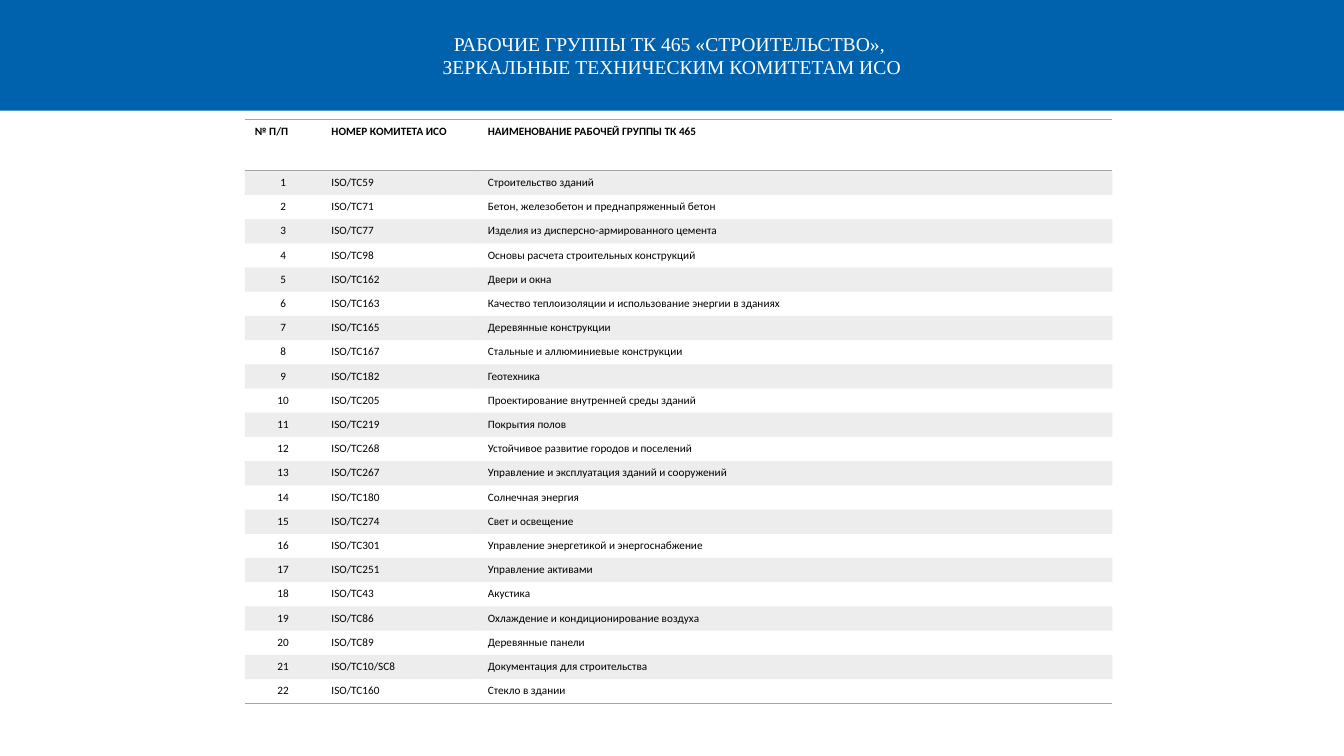
"""Build a slide listing the TC 465 working groups that mirror ISO committees."""
import pptx
import pptx.dml.color
import pptx.enum.shapes
import pptx.enum.text
import pptx.oxml
import pptx.oxml.ns
import pptx.util

Cm = pptx.util.Cm
Pt = pptx.util.Pt
RGB = pptx.dml.color.RGBColor
ALIGN = pptx.enum.text.PP_ALIGN
qn = pptx.oxml.ns.qn

BLUE = RGB(0x00, 0x62, 0xAC)
WHITE = RGB(0xFF, 0xFF, 0xFF)
BLACK = RGB(0x00, 0x00, 0x00)
GREY = RGB(0xA5, 0xA5, 0xA5)
PLAIN = "{2D5ABB26-0587-4C30-8999-92F81FD0307C}"

TITLE = [
    "РАБОЧИЕ ГРУППЫ ТК 465 «СТРОИТЕЛЬСТВО», ",
    "ЗЕРКАЛЬНЫЕ ТЕХНИЧЕСКИМ КОМИТЕТАМ ИСО",
]
HEAD = ["№ П/П", "НОМЕР КОМИТЕТА ИСО", "НАИМЕНОВАНИЕ РАБОЧЕЙ ГРУППЫ ТК 465"]
GROUPS = [
    ("59", "Строительство зданий"),
    ("71", "Бетон, железобетон и преднапряженный бетон"),
    ("77", "Изделия из дисперсно-армированного цемента"),
    ("98", "Основы расчета строительных конструкций"),
    ("162", "Двери и окна"),
    ("163", "Качество теплоизоляции и использование энергии в зданиях"),
    ("165", "Деревянные конструкции"),
    ("167", "Стальные и аллюминиевые конструкции"),
    ("182", "Геотехника"),
    ("205", "Проектирование внутренней среды зданий"),
    ("219", "Покрытия полов"),
    ("268", "Устойчивое развитие городов и поселений"),
    ("267", "Управление и эксплуатация зданий и сооружений"),
    ("180", "Солнечная энергия"),
    ("274", "Свет и освещение"),
    ("301", "Управление энергетикой и энергоснабжение"),
    ("251", "Управление активами"),
    ("43", "Акустика"),
    ("86", "Охлаждение и кондиционирование воздуха"),
    ("89", "Деревянные панели"),
    ("10/SC8", "Документация для строительства"),
    ("160", "Стекло в здании"),
]


class Page:
    """Hold the fonts and the slide, and draw the elements on it."""

    serif = "Times New Roman"
    sans = "Calibri"

    def __init__(self, slide):
        self.slide = slide

    def style(self, para, face, size, color, align, bold=False):
        """Set the font and alignment of a paragraph."""
        font = para.font
        font.name, font.size, font.bold = face, Pt(size), bold
        font.color.rgb = color
        para.alignment = align

    def banner(self, lines, width, height):
        """Draw the title band across the top."""
        kind = pptx.enum.shapes.MSO_SHAPE.RECTANGLE
        band = self.slide.shapes.add_shape(kind, 0, 0, width, height)
        band.shadow.inherit = False
        band.fill.solid()
        band.fill.fore_color.rgb = BLUE
        band.line.fill.background()
        frame = band.text_frame
        frame.vertical_anchor = pptx.enum.text.MSO_ANCHOR.MIDDLE
        frame.text = "\n".join(lines)
        for para in frame.paragraphs:
            self.style(para, self.serif, 14, WHITE, ALIGN.CENTER)

    def rule(self, cell, side):
        """Draw a grey line along one side of a cell."""
        props = cell._tc.get_or_add_tcPr()
        line = pptx.oxml.parse_xml(
            f'<a:{side} {pptx.oxml.ns.nsdecls("a")} w="{Pt(1)}"><a:solidFill>'
            f'<a:srgbClr val="{GREY}"/></a:solidFill></a:{side}>'
        )
        props.append(line)

    def shade(self, cell):
        """Fill a cell with grey at 20 percent opacity."""
        cell.fill.solid()
        cell.fill.fore_color.rgb = GREY
        color = next(cell._tc.tcPr.iter(qn("a:srgbClr")))
        color.append(color.makeelement(qn("a:alpha"), {"val": "20000"}))

    def table(self, rows, left, top, widths, first, step):
        """Draw a table with a ruled header and shaded odd rows."""
        last = len(rows) - 1
        frame = self.slide.shapes.add_table(
            len(rows), len(widths), left, top, sum(widths), first + step * last
        )
        grid = frame.table
        grid.horz_banding = False
        grid._tbl.tblPr.find(qn("a:tableStyleId")).text = PLAIN
        for col, width in zip(grid.columns, widths):
            col.width = width
        for i, texts in enumerate(rows):
            grid.rows[i].height = step if i else first
            for j, text in enumerate(texts):
                cell = grid.cell(i, j)
                cell.text = text
                align = ALIGN.CENTER if i and j == 0 else ALIGN.LEFT
                para = cell.text_frame.paragraphs[0]
                self.style(para, self.sans, 8, BLACK, align, i == 0)
                if i == 0:
                    self.rule(cell, "lnT")
                if i in (0, last):
                    self.rule(cell, "lnB")
                if i % 2:
                    self.shade(cell)
                else:
                    cell.fill.background()


def main():
    """Build and save the slide."""
    deck = pptx.Presentation()
    deck.slide_width, deck.slide_height = Cm(33.87), Cm(19.05)
    page = Page(deck.slides.add_slide(deck.slide_layouts[6]))
    page.banner(TITLE, deck.slide_width, Cm(2.79))
    rows = [HEAD] + [
        (str(n), f"ISO/TC{code}", name)
        for n, (code, name) in enumerate(GROUPS, 1)
    ]
    widths = [Cm(1.93), Cm(3.94), Cm(15.99)]
    page.table(rows, Cm(6.17), Cm(3.02), widths, Cm(1.28), Cm(0.61))
    deck.save("out.pptx")


if __name__ == "__main__":
    main()
